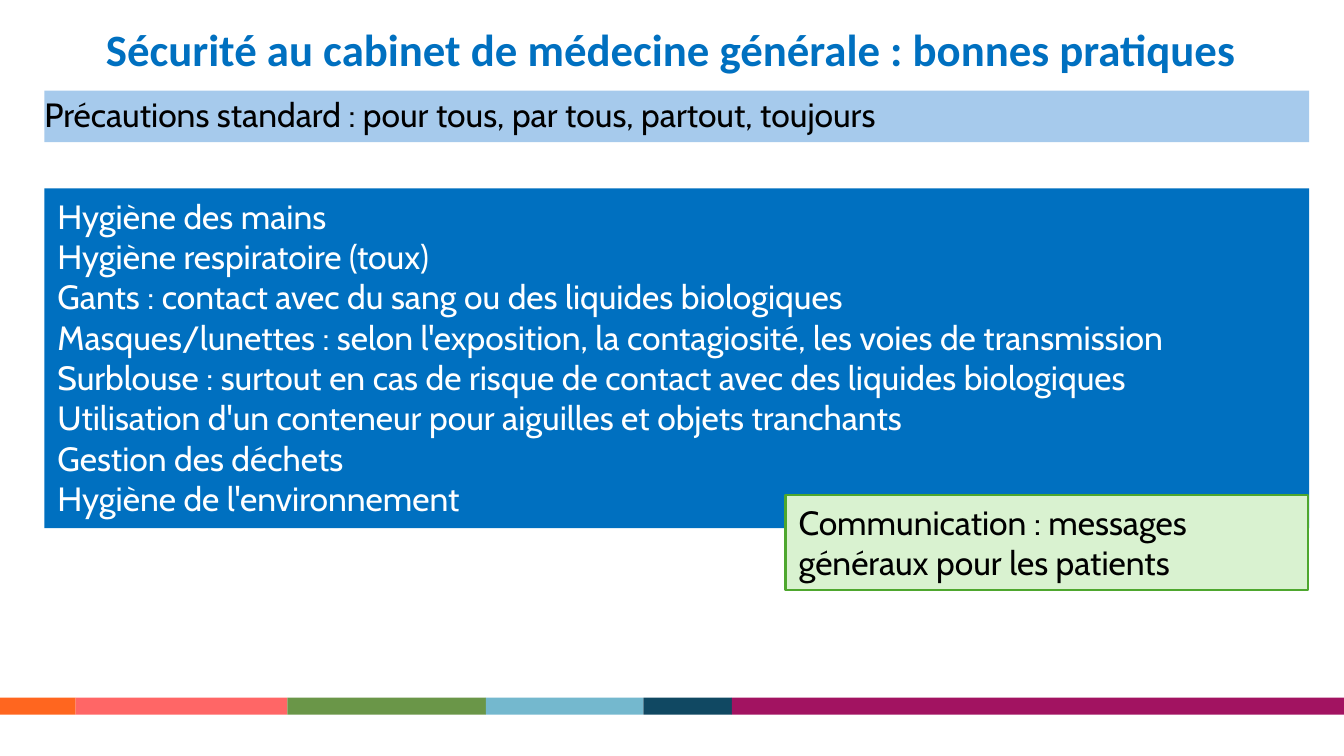
from itertools import pairwise

from pptx import Presentation
from pptx.dml.color import RGBColor
from pptx.enum.shapes import MSO_SHAPE
from pptx.enum.text import MSO_ANCHOR, PP_ALIGN
from pptx.util import Inches, Pt

WIDTH, HEIGHT = Inches(13.33), Inches(7.5)
WHITE = RGBColor(0xFF, 0xFF, 0xFF)
BLACK = RGBColor(0x00, 0x00, 0x00)
BLUE = RGBColor(0x00, 0x70, 0xC0)
PALE_BLUE = RGBColor(0xA6, 0xCA, 0xEC)
PALE_GREEN = RGBColor(0xD9, 0xF2, 0xD0)
GREEN = RGBColor(0x4E, 0xA7, 0x2E)
STRIPE_COLOURS = [
    RGBColor(0xFF, 0x66, 0x1F),
    RGBColor(0xFF, 0x66, 0x66),
    RGBColor(0x6A, 0x96, 0x48),
    RGBColor(0x74, 0xB8, 0xCE),
    RGBColor(0x10, 0x48, 0x62),
    RGBColor(0xA2, 0x13, 0x61),
]
STRIPE_EDGES = [0, 5.63, 21.38, 36.16, 47.86, 54.46, 100]
PRECAUTIONS = [
    "Hygiène des mains",
    "Hygiène respiratoire (toux)",
    "Gants : contact avec du sang ou des liquides biologiques",
    "Masques/lunettes : selon l'exposition, la contagiosité, les voies de transmission",
    "Surblouse : surtout en cas de risque de contact avec des liquides biologiques",
    "Utilisation d'un conteneur pour aiguilles et objets tranchants",
    "Gestion des déchets",
    "Hygiène de l'environnement",
]


def slide_box(left, top, width, height):
    return [round(share * side / 100) for share, side in
            zip((left, top, width, height), (WIDTH, HEIGHT) * 2)]


def add_panel(slide, box, fill, border=None):
    panel = slide.shapes.add_shape(MSO_SHAPE.RECTANGLE, *box)
    panel.shadow.inherit = False
    panel.fill.solid()
    panel.fill.fore_color.rgb = fill
    if border:
        panel.line.color.rgb = border
        panel.line.width = Pt(1.5)
    else:
        panel.line.fill.background()
    return panel


def write(shape, lines, colour=BLACK, font="Cabin", size=24, bold=False,
          align=PP_ALIGN.LEFT, anchor=MSO_ANCHOR.TOP, spacing=None,
          margins=(0, 0), wrap=True):
    frame = shape.text_frame
    frame.word_wrap = wrap
    frame.vertical_anchor = anchor
    frame.margin_left = frame.margin_right = Inches(margins[0])
    frame.margin_top = frame.margin_bottom = Inches(margins[1])
    frame.text = "\n".join(lines)
    for paragraph in frame.paragraphs:
        paragraph.alignment = align
        paragraph.line_spacing = spacing
        paragraph.font.name = font
        paragraph.font.size = Pt(size)
        paragraph.font.bold = bold
        paragraph.font.color.rgb = colour


def add_stripe(slide, box):
    left, top, width, height = box
    for (start, end), colour in zip(pairwise(STRIPE_EDGES), STRIPE_COLOURS):
        segment = (left + round(width * start / 100), top,
                   round(width * (end - start) / 100), height)
        add_panel(slide, segment, colour)


def add_title(slide, box):
    write(slide.shapes.add_textbox(*box),
          ["Sécurité au cabinet de médecine générale : bonnes pratiques"],
          colour=BLUE, font="Calibri", size=32, bold=True, spacing=0.9,
          align=PP_ALIGN.CENTER, anchor=MSO_ANCHOR.MIDDLE, wrap=False)


def add_banner(slide, box):
    write(add_panel(slide, box, PALE_BLUE),
          ["Précautions standard : pour tous, par tous, partout, toujours"],
          anchor=MSO_ANCHOR.MIDDLE, spacing=0.9)


def add_precautions(slide, box):
    write(add_panel(slide, box, BLUE), PRECAUTIONS, colour=WHITE,
          margins=(0.13, 0.07))


def add_communication(slide, box):
    write(add_panel(slide, box, PALE_GREEN, GREEN),
          ["Communication : messages généraux pour les patients"],
          margins=(0.13, 0.07))


def main():
    deck = Presentation()
    deck.slide_width, deck.slide_height = WIDTH, HEIGHT
    slide = deck.slides.add_slide(deck.slide_layouts[6])
    add_stripe(slide, slide_box(0, 92.27, 100, 2.27))
    add_title(slide, slide_box(2.7, 3.47, 94.5, 6.93))
    add_banner(slide, slide_box(3.3, 12, 94.1, 6.8))
    add_precautions(slide, slide_box(3.3, 24.93, 94.1, 44.93))
    add_communication(slide, slide_box(58.44, 65.47, 38.86, 12.53))
    deck.save("out.pptx")


if __name__ == "__main__":
    main()
